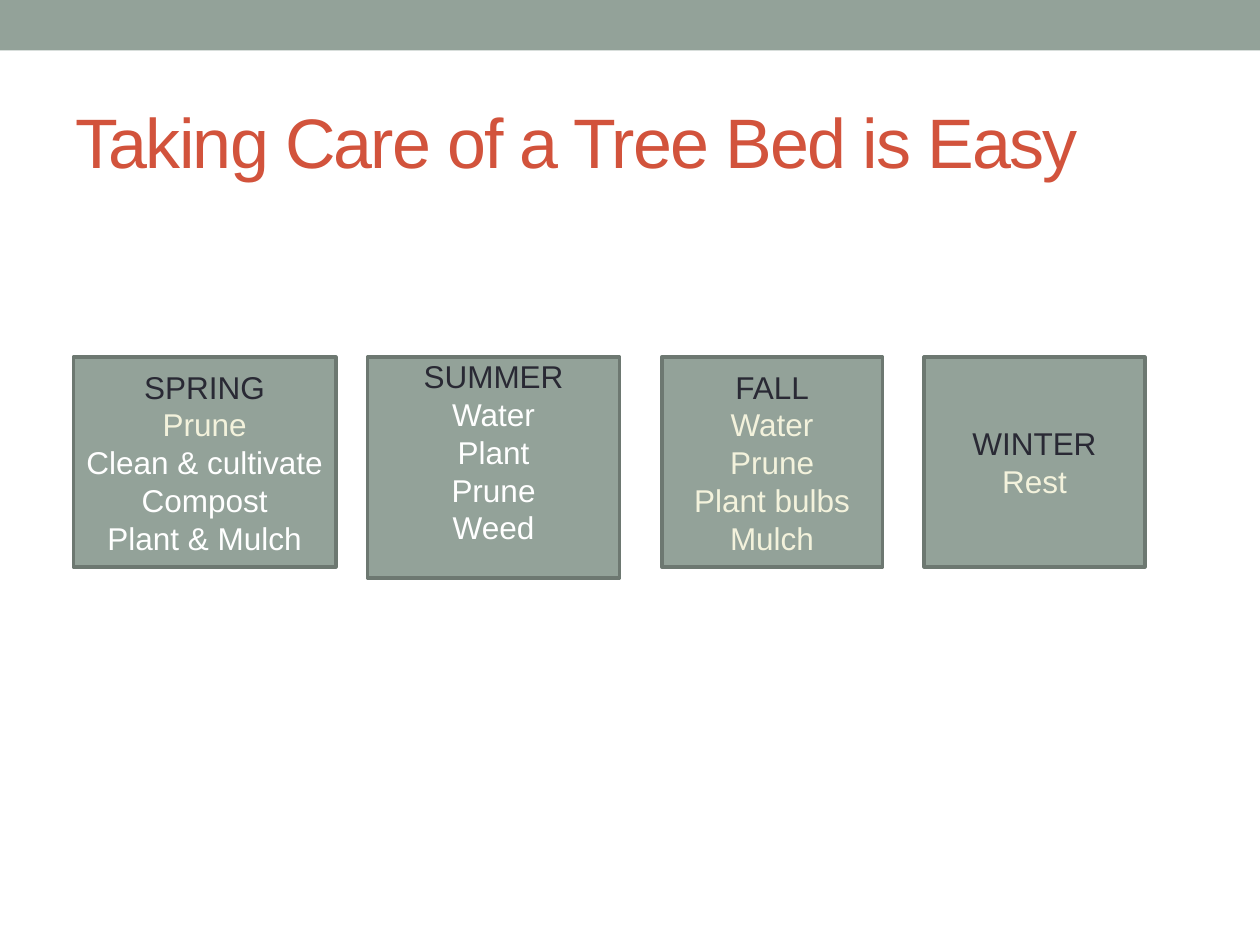
from pptx import Presentation
from pptx.dml.color import RGBColor
from pptx.enum import shapes, text
from pptx.util import Cm, Pt

# Content
TITLE = "Taking Care of a Tree Bed is Easy"
FONT = "Arial"
SAGE, EDGE, RUST = "93A299", "6D7871", "D2533C"
DARK, CREAM, WHITE = "292934", "F3F2DC", "FFFFFF"

MIDDLE, TOP = text.MSO_ANCHOR.MIDDLE, text.MSO_ANCHOR.TOP
# left, width, height (cm), anchor, lines with their colours
SEASONS = [
    (1.48, 5.29, 4.23, MIDDLE, [
        ("SPRING", DARK), ("Prune", CREAM), ("Clean & cultivate", WHITE),
        ("Compost", WHITE), ("Plant & Mulch", WHITE)]),
    (7.41, 5.08, 4.45, TOP, [
        ("SUMMER", DARK), ("Water", WHITE), ("Plant", WHITE),
        ("Prune", WHITE), ("Weed", WHITE)]),
    (13.34, 4.45, 4.23, MIDDLE, [
        ("FALL", DARK), ("Water", CREAM), ("Prune", CREAM),
        ("Plant bulbs", CREAM), ("Mulch", CREAM)]),
    (18.63, 4.45, 4.23, MIDDLE, [("WINTER", DARK), ("Rest", CREAM)]),
]
SEASON_TOP = 7.2


def paint(color_format, hex_code):
    color_format.rgb = RGBColor.from_string(hex_code)


def style(para, size, color, align):
    para.alignment = align
    para.font.name = FONT
    para.font.size = Pt(size)
    paint(para.font.color, color)


def add_box(page, left, top, width, height):
    box = page.shapes.add_shape(shapes.MSO_SHAPE.RECTANGLE,
                                Cm(left), Cm(top), Cm(width), Cm(height))
    box.shadow.inherit = False
    box.fill.solid()
    paint(box.fill.fore_color, SAGE)
    return box


def add_season(page, left, width, height, anchor, lines):
    box = add_box(page, left, SEASON_TOP, width, height)
    box.line.width = Pt(2.08)
    paint(box.line.color, EDGE)
    frame = box.text_frame
    frame.word_wrap = True
    frame.vertical_anchor = anchor
    frame.margin_left = frame.margin_right = Cm(0.2)
    frame.margin_top = frame.margin_bottom = 0
    frame.text = "\n".join(line for line, color in lines)
    for para, (line, color) in zip(frame.paragraphs, lines):
        style(para, 18, color, text.PP_ALIGN.CENTER)


def main():
    deck = Presentation()
    deck.slide_width, deck.slide_height = Cm(25.4), Cm(19.05)
    page = deck.slides.add_slide(deck.slide_layouts[5])

    # Top band
    band = add_box(page, 0, 0, 25.4, 1.02)
    band.line.fill.background()

    # Title
    title = page.shapes.title
    title.left, title.top = Cm(1.27), Cm(1.47)
    title.width, title.height = Cm(22.86), Cm(2.74)
    title.text_frame.text = TITLE
    title.text_frame.vertical_anchor = MIDDLE
    heading = title.text_frame.paragraphs[0]
    style(heading, 40, RUST, text.PP_ALIGN.LEFT)
    # Letter spacing of -1 pt
    heading.runs[0].font._element.set("spc", "-100")

    # Season boxes
    for season in SEASONS:
        add_season(page, *season)

    deck.save("out.pptx")


if __name__ == "__main__":
    main()
